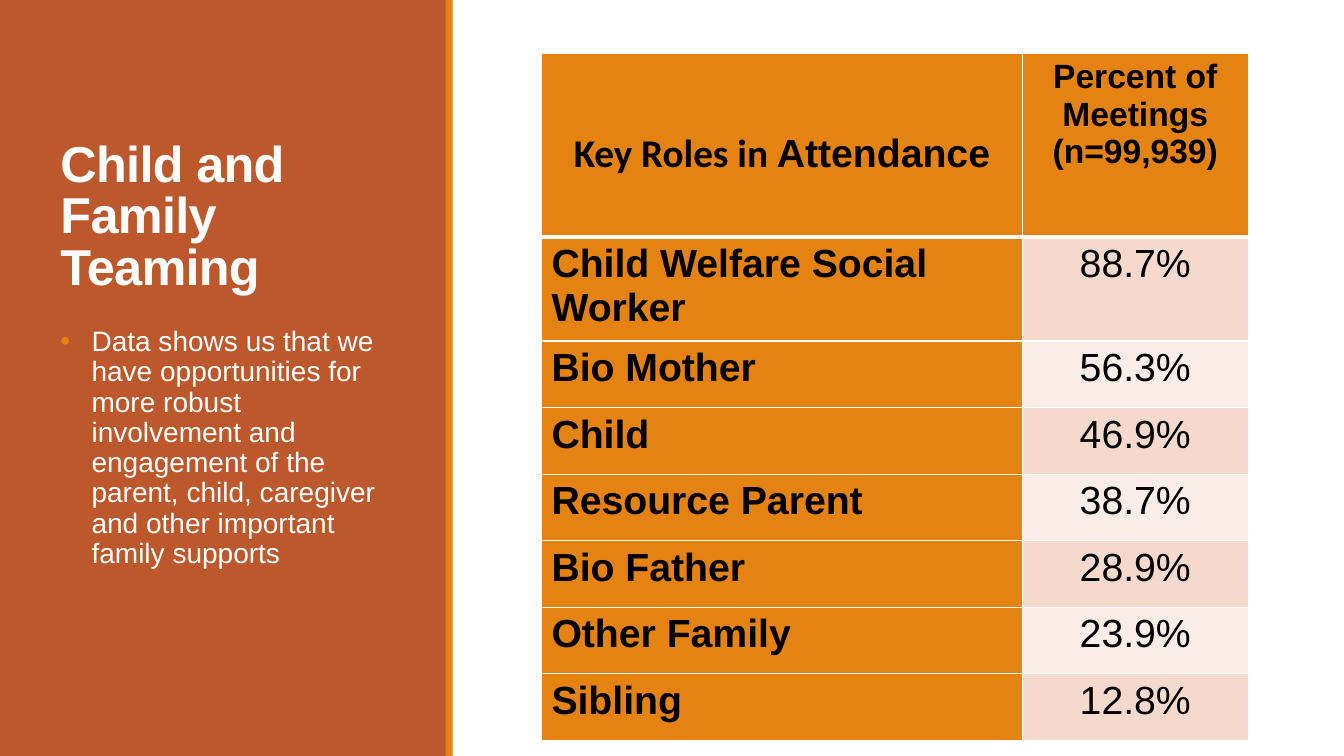
from dataclasses import dataclass

from lxml import etree
from pptx import Presentation
from pptx.dml.color import RGBColor
from pptx.enum import shapes, text
from pptx.oxml import ns
from pptx.util import Inches, Pt

RUST = RGBColor(0xBD, 0x58, 0x2C)
ORANGE = RGBColor(0xE4, 0x83, 0x12)
PINK = RGBColor(0xF5, 0xD9, 0xCC)
PALE_PINK = RGBColor(0xFA, 0xED, 0xE7)
WHITE = RGBColor(0xFF, 0xFF, 0xFF)
BLACK = RGBColor(0, 0, 0)

CENTER = text.PP_ALIGN.CENTER
LEFT = text.PP_ALIGN.LEFT
HEADER_HEIGHT, ROW_HEIGHT = 1.82, 0.66
COLUMN_WIDTHS = (4.77, 2.24)


@dataclass(frozen=True)
class Panel:
    left: float
    width: float
    color: RGBColor


@dataclass(frozen=True)
class Role:
    name: str
    percent: str


PANELS = (Panel(0, 4.43, RUST), Panel(4.42, 0.07, ORANGE))
ROLES = (
    Role("Child Welfare Social Worker", "88.7%"),
    Role("Bio Mother", "56.3%"),
    Role("Child", "46.9%"),
    Role("Resource Parent", "38.7%"),
    Role("Bio Father", "28.9%"),
    Role("Other Family", "23.9%"),
    Role("Sibling", "12.8%"),
)


def add_text(paragraph, content: str, *, size: float, color: RGBColor = BLACK,
             bold: bool = False, font: str = "Arial", align=LEFT,
             line_spacing: float = 1.0, tracking: float = 0) -> None:
    """Append formatted text to a paragraph; a newline becomes a line break."""
    paragraph.alignment = align
    paragraph.line_spacing = line_spacing
    for index, line in enumerate(content.split("\n")):
        if index:
            paragraph.add_line_break()
        run = paragraph.add_run()
        run.text = line
        run.font.size = Pt(size)
        run.font.name = font
        run.font.bold = bold
        run.font.color.rgb = color
        if tracking:
            run._r.get_or_add_rPr().set("spc", str(round(tracking * 100)))


def add_child(parent, tag: str, **attributes: str):
    return etree.SubElement(parent, ns.qn(tag), attributes)


def add_bullet(paragraph, color: RGBColor, indent: float) -> None:
    properties = paragraph._p.get_or_add_pPr()
    properties.set("marL", str(Inches(indent)))
    properties.set("indent", str(-Inches(indent)))
    add_child(add_child(properties, "a:buClr"), "a:srgbClr", val=str(color))
    add_child(properties, "a:buFont", typeface="Arial")
    add_child(properties, "a:buChar", char="•")


def format_cell(cell, fill: RGBColor, top: float = 1, bottom: float = 1) -> None:
    """Set white borders, with widths in points, and then the fill."""
    properties = cell._tc.get_or_add_tcPr()
    for side, width in (("L", 1), ("R", 1), ("T", top), ("B", bottom)):
        line = add_child(properties, f"a:ln{side}", w=str(Pt(width)))
        add_child(add_child(line, "a:solidFill"), "a:srgbClr", val=str(WHITE))
    cell.fill.solid()
    cell.fill.fore_color.rgb = fill


def add_panel(slide, panel: Panel, height: int) -> None:
    shape = slide.shapes.add_shape(shapes.MSO_SHAPE.RECTANGLE, Inches(panel.left), 0,
                                   Inches(panel.width), height)
    shape.shadow.inherit = False
    shape.fill.solid()
    shape.fill.fore_color.rgb = panel.color
    shape.line.fill.background()


def add_title(slide) -> None:
    title = slide.shapes.title
    title.left, title.top = Inches(0.5), Inches(0.48)
    title.width, title.height = Inches(3.5), Inches(2.5)
    frame = title.text_frame
    frame.word_wrap = True
    frame.auto_size = text.MSO_AUTO_SIZE.NONE
    frame.vertical_anchor = text.MSO_ANCHOR.BOTTOM
    add_text(frame.paragraphs[0], "Child and Family Teaming", size=36, color=WHITE,
             bold=True, line_spacing=0.85, tracking=-0.5)


def add_body(slide) -> None:
    box = slide.shapes.add_textbox(Inches(0.5), Inches(3.2), Inches(3.5), Inches(3.7))
    box.text_frame.word_wrap = True
    paragraph = box.text_frame.paragraphs[0]
    add_text(paragraph,
             "Data shows us that we have opportunities for more robust involvement and "
             "engagement of the parent, child, caregiver and other important family supports",
             size=20, color=WHITE, line_spacing=0.9)
    paragraph.space_before, paragraph.space_after = Pt(12), Pt(2)
    add_bullet(paragraph, ORANGE, 0.31)


def add_attendance_table(slide) -> None:
    height = HEADER_HEIGHT + ROW_HEIGHT * len(ROLES)
    table = slide.shapes.add_table(len(ROLES) + 1, 2, Inches(5.37), Inches(0.53),
                                   Inches(sum(COLUMN_WIDTHS)), Inches(height)).table
    for column, width in zip(table.columns, COLUMN_WIDTHS):
        column.width = Inches(width)
    for index, row in enumerate(table.rows):
        row.height = Inches(ROW_HEIGHT if index else HEADER_HEIGHT)

    roles_header, percent_header = table.rows[0].cells
    for cell in (roles_header, percent_header):
        format_cell(cell, ORANGE, bottom=3)
    paragraph = roles_header.text_frame.paragraphs[0]
    for content, font in (("Key Roles in ", "Calibri"), ("Attendance", "Arial")):
        add_text(paragraph, content, size=28, bold=True, font=font, align=CENTER,
                 line_spacing=2.5)
    add_text(percent_header.text_frame.paragraphs[0], "Percent of Meetings\n(n=99,939)",
             size=24, bold=True, align=CENTER)

    for index, role in enumerate(ROLES, start=1):
        name_cell, percent_cell = table.rows[index].cells
        top = 3 if index == 1 else 1
        format_cell(name_cell, ORANGE, top=top)
        format_cell(percent_cell, PINK if index % 2 else PALE_PINK, top=top)
        add_text(name_cell.text_frame.paragraphs[0], role.name, size=28, bold=True)
        add_text(percent_cell.text_frame.paragraphs[0], role.percent, size=28, align=CENTER)


def main() -> None:
    presentation = Presentation()
    presentation.slide_width = Inches(13.33)
    presentation.slide_height = Inches(7.5)
    slide = presentation.slides.add_slide(presentation.slide_layouts.get_by_name("Title Only"))
    for panel in PANELS:
        add_panel(slide, panel, presentation.slide_height)
    # The title placeholder comes first in the tree; raise it above the panels.
    slide.shapes._spTree.append(slide.shapes.title._element)
    add_title(slide)
    add_body(slide)
    add_attendance_table(slide)
    presentation.save("out.pptx")


if __name__ == "__main__":
    main()
